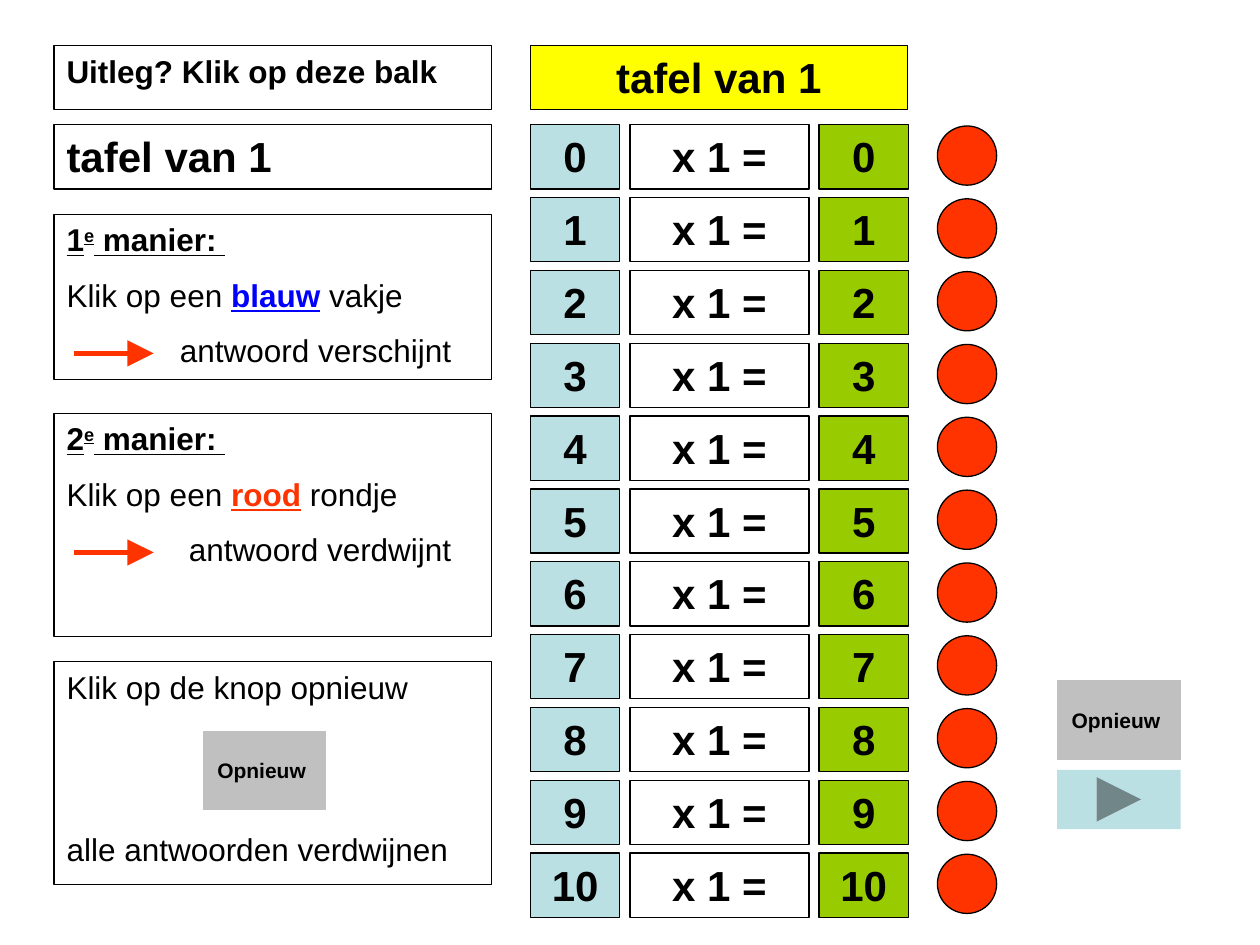
from collections import namedtuple
from dataclasses import dataclass

from lxml import etree
from pptx import Presentation
from pptx import util as u
from pptx.dml.color import RGBColor
from pptx.enum import shapes, text
from pptx.oxml import ns

# The slide is a grid of 100 columns by 75 rows, each cell a tenth of an inch
CELL = u.Inches(0.1)
COLUMNS, ROWS = 100, 75
Box = namedtuple("Box", "left top width height")


@dataclass(frozen=True)
class Theme:
    font: str = "Arial"
    ink: str = "000000"
    paper: str = "FFFFFF"
    title: str = "FFFF00"
    factor: str = "BBE0E3"
    answer: str = "99CC00"
    red: str = "FF3300"
    blue: str = "0000FF"
    button: str = "C0C0C0"
    large: int = 24
    body: int = 18
    small: int = 12
    outline: float = 0.75
    arrow: float = 3


THEME = Theme()
CENTER = text.PP_ALIGN.CENTER
PRESET = shapes.MSO_SHAPE


def cells(*counts):
    return [round(count * CELL) for count in counts]


def add_part(page, box, preset=PRESET.RECTANGLE, fill=None, outlined=True):
    part = page.shapes.add_shape(preset, *cells(*box))
    part.shadow.inherit = False
    if fill:
        part.fill.solid()
        part.fill.fore_color.rgb = RGBColor.from_string(fill)
    else:
        part.fill.background()
    if outlined:
        part.line.color.rgb = RGBColor.from_string(THEME.ink)
        part.line.width = u.Pt(THEME.outline)
    else:
        part.line.fill.background()
    frame = part.text_frame
    frame.word_wrap = True
    frame.vertical_anchor = text.MSO_ANCHOR.TOP
    return part


def add_span(para, words, size=THEME.body, color=THEME.ink, bold=False,
             underline=False, raised=False):
    span = para.add_run()
    span.text = words
    font = span.font
    font.name, font.size = THEME.font, u.Pt(size)
    font.bold, font.underline = bold, underline
    font.color.rgb = RGBColor.from_string(color)
    if raised:
        span._r.get_or_add_rPr().set("baseline", "30000")


def add_para(part, *spans, align=text.PP_ALIGN.LEFT, before=0, indent=0):
    """Fill the first empty paragraph or append one; a span is (words, format)."""
    frame = part.text_frame
    para = frame.paragraphs[0]
    if para.runs:
        para = frame.add_paragraph()
    para.alignment, para.space_before = align, u.Pt(before)
    if indent:
        para._p.get_or_add_pPr().set("marL", str(cells(indent)[0]))
    for words, style in spans:
        add_span(para, words, **style)


def add_label(page, box, words, fill=None, align=CENTER, size=THEME.large):
    part = add_part(page, box, fill=fill)
    add_para(part, (words, dict(size=size, bold=True)), align=align)


def add_arrow(page, left, top, length):
    arrow = page.shapes.add_connector(
        shapes.MSO_CONNECTOR.STRAIGHT, *cells(left, top, left + length, top))
    arrow.line.color.rgb = RGBColor.from_string(THEME.red)
    arrow.line.width = u.Pt(THEME.arrow)
    etree.SubElement(arrow.line._get_or_add_ln(), ns.qn("a:tailEnd"),
                     type="triangle", w="lg", len="lg")
    etree.SubElement(arrow._element.spPr, ns.qn("a:effectLst"))


def add_again_button(page, box):
    part = add_part(page, box, PRESET.ACTION_BUTTON_CUSTOM,
                    THEME.button, outlined=False)
    part.text_frame.word_wrap = False
    part.text_frame.vertical_anchor = text.MSO_ANCHOR.MIDDLE
    add_para(part, ("Opnieuw ", dict(size=THEME.small, bold=True)), align=CENTER)


def add_method(page, box, number, color_word, color, target, outcome, indent):
    """One way of working: heading, instruction and outcome with an arrow."""
    part = add_part(page, box)
    heading = dict(bold=True, underline=True)
    add_para(part, (number, heading), ("e", dict(heading, raised=True)),
             (" manier: ", heading))
    add_para(part, ("Klik op een ", {}), (color_word, dict(heading, color=color)),
             (f" {target}", {}), before=10)
    add_para(part, (outcome, {}), before=10, indent=indent)
    add_arrow(page, box.left + 1.6, box.top + 11.05, 6.3)


def add_explanation(page, box):
    def panel(top, height):
        return Box(box.left, top, box.width, height)

    left = text.PP_ALIGN.LEFT
    add_label(page, panel(box.top, 5.1), "Uitleg? Klik op deze balk",
              align=left, size=THEME.body)
    add_label(page, panel(box.top + 6.3, 5.1), "tafel van 1", align=left)
    add_method(page, panel(box.top + 13.4, 13.1), "1", "blauw", THEME.blue,
               "vakje", "antwoord verschijnt", indent=9)
    add_method(page, panel(box.top + 29.2, 17.7), "2", "rood", THEME.red,
               "rondje", "antwoord verdwijnt", indent=9.7)

    # Starting over: the button sits between the two lines
    restart = panel(box.top + 48.9, 17.7)
    part = add_part(page, restart)
    add_para(part, ("Klik op de knop opnieuw", {}))
    add_para(part, ("alle antwoorden verdwijnen", {}), before=71)
    add_again_button(page, Box(box.left + 11.8, restart.top + 5.5, 9.8, 6.3))


def add_times_table(page, box, factor=1, last=10):
    """Title bar above rows of factor, sum, answer and a red dot."""
    height, first, pitch, dot = 5.1, 6.3, 5.78, 4.7
    add_label(page, Box(box.left, box.top, 29.9, height),
              f"tafel van {factor}", THEME.title)
    for number in range(last + 1):
        top = box.top + first + number * pitch
        row = [(0, 7.1, f"{number}", THEME.factor),
               (7.9, 14.2, f"x {factor} =", THEME.paper),
               (22.9, 7.1, f"{number * factor}", THEME.answer)]
        for offset, width, words, fill in row:
            add_label(page, Box(box.left + offset, top, width, height), words, fill)
        add_part(page, Box(box.left + box.width - dot, top + 0.1, dot, dot),
                 PRESET.OVAL, THEME.red)


def add_navigation(page, box):
    add_again_button(page, Box(box.left, box.top, box.width, 6.3))
    add_part(page, Box(box.left, box.top + 7.1, box.width, 4.7),
             PRESET.ACTION_BUTTON_FORWARD_OR_NEXT, THEME.factor, outlined=False)


def main():
    deck = Presentation()
    deck.slide_width, deck.slide_height = cells(COLUMNS, ROWS)
    page = deck.slides.add_slide(deck.slide_layouts[6])
    add_explanation(page, Box(4.3, 3.6, 34.7, 66.6))
    add_times_table(page, Box(42.1, 3.6, 37, 69.2))
    add_navigation(page, Box(83.9, 54, 9.8, 11.8))
    deck.save("out.pptx")


if __name__ == "__main__":
    main()
